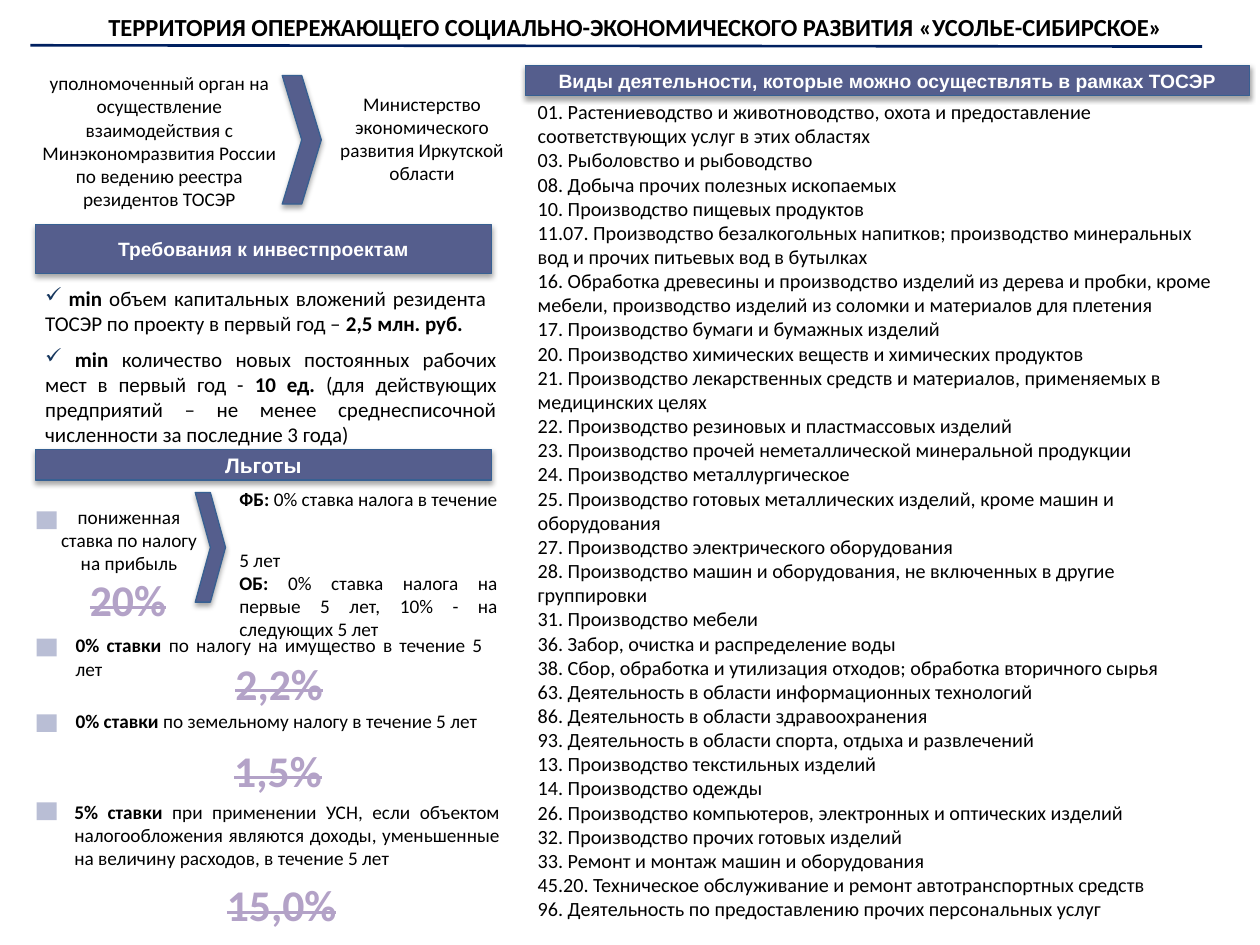
from lxml.etree import SubElement
from pptx import Presentation
from pptx.dml.color import RGBColor
from pptx.enum.shapes import MSO_CONNECTOR, MSO_SHAPE
from pptx.enum.text import MSO_ANCHOR, MSO_AUTO_SIZE, PP_ALIGN
from pptx.oxml.ns import qn
from pptx.util import Pt

COLORS = {"rule": "002060", "bar": "555E8D", "edge": "376092", "marker": "B9BED5",
          "rate": "B3A2C7", "check": "17375E", "black": "000000", "white": "FFFFFF"}
LEFT, CENTER, JUSTIFY = PP_ALIGN.LEFT, PP_ALIGN.CENTER, PP_ALIGN.JUSTIFY

TITLE = "*ТЕРРИТОРИЯ ОПЕРЕЖАЮЩЕГО СОЦИАЛЬНО-ЭКОНОМИЧЕСКОГО РАЗВИТИЯ «УСОЛЬЕ-СИБИРСКОЕ»*"
ACTIVITIES = [
    "01. Растениеводство и животноводство, охота и предоставление соответствующих услуг в этих областях",
    "03. Рыболовство и рыбоводство",
    "08. Добыча прочих полезных ископаемых",
    "10. Производство пищевых продуктов",
    "11.07. Производство безалкогольных напитков; производство минеральных вод и прочих питьевых вод в бутылках",
    "16. Обработка древесины и производство изделий из дерева и пробки, кроме мебели, "
    "производство изделий из соломки и материалов для плетения",
    "17. Производство бумаги и бумажных изделий",
    "20. Производство химических веществ и химических продуктов",
    "21. Производство лекарственных средств и материалов, применяемых в медицинских целях",
    "22. Производство резиновых и пластмассовых изделий",
    "23. Производство прочей неметаллической минеральной продукции",
    "24. Производство металлургическое",
    "25. Производство готовых металлических изделий, кроме машин и оборудования",
    "27. Производство электрического оборудования",
    "28. Производство машин и оборудования, не включенных в другие группировки",
    "31. Производство мебели",
    "36. Забор, очистка и распределение воды",
    "38. Сбор, обработка и утилизация отходов; обработка вторичного сырья",
    "63. Деятельность в области информационных технологий",
    "86. Деятельность в области здравоохранения",
    "93. Деятельность в области спорта, отдыха и развлечений",
    "13. Производство текстильных изделий",
    "14. Производство одежды",
    "26. Производство компьютеров, электронных и оптических изделий",
    "32. Производство прочих готовых изделий",
    "33. Ремонт и монтаж машин и оборудования",
    "45.20. Техническое обслуживание и ремонт автотранспортных средств",
    "96. Деятельность по предоставлению прочих персональных услуг",
]
# Every box is (left, top, width, height) in points; *text* is bold.
REQUIREMENTS = [
    ((18.7, 159.8, 266.4, 36),
     " *min *объем капитальных вложений резидента ТОСЭР по проекту в первый год – *2,5 млн. руб.*"),
    ((18.7, 194.4, 272.2, 65.5),
     "* min *количество новых постоянных рабочих мест в первый год - *10 ед. *"
     "(для действующих предприятий – не менее среднесписочной численности за последние 3 года)"),
]
BARS = [
    ((300.2, 37.4, 414, 17.3), 11, "*Виды деятельности, которые можно осуществлять в рамках ТОСЭР*"),
    ((20.2, 257, 260.6, 17.3), 12, "*Льготы*"),
    ((20.2, 128.2, 260.6, 28.1), 11, "*Требования к инвестпроектам*"),
]
CHEVRONS = [(161.3, 43.2, 22.3, 73.4), (111.6, 281.5, 17.3, 62.6)]
MARKER_TOPS = [292.3, 365, 408.2, 458.6]
OLD_RATES = [
    ((41.8, 324, 62.6, 37.4), "*20%*"),
    ((124.6, 371.5, 69.8, 37.4), "*2,2%*"),
    ((124.6, 421.2, 68.4, 37.4), "*1,5%*"),
    ((120.2, 498.2, 81.4, 37.4), "*15,0%*"),
]
NOTES = [
    ((14.4, 37.4, 153.4, 87.1), CENTER,
     ["уполномоченный орган на осуществление взаимодействия с Минэкономразвития России "
      "по ведению реестра резидентов ТОСЭР"]),
    ((190.1, 49, 102.2, 60.5), CENTER, ["Министерство экономического развития Иркутской области"]),
    ((133.9, 275, 153.4, 74.2), JUSTIFY,
     ["*ФБ: *0% ставка налога в течение \n5 лет",
      "*ОБ: *0% ставка налога на первые 5 лет, 10% - на следующих 5 лет"]),
    ((30.2, 285.1, 87.1, 47.5), CENTER, ["пониженная ставка по налогу на прибыль"]),
    ((40.3, 358.6, 238.3, 33.8), JUSTIFY, ["*0% ставки *по налогу на имущество в течение 5 лет"]),
    ((40.3, 401.8, 249.1, 20.9), JUSTIFY, ["*0% ставки *по земельному налогу в течение 5 лет"]),
    ((39.6, 453.6, 249.1, 47.5), JUSTIFY,
     ["*5% ставки *при применении УСН, если объектом налогообложения являются доходы, "
      "уменьшенные на величину расходов, в течение 5 лет"]),
]

prs = Presentation()
prs.slide_width, prs.slide_height = Pt(720), Pt(540)
s = prs.slides.add_slide(prs.slide_layouts[6])


def rgb(name):
    return RGBColor.from_string(COLORS[name])


def write(sp, paragraphs, size=11, font="Calibri", color="black", align=LEFT, inset=7.2,
          anchor=MSO_ANCHOR.TOP, grow=True, wrap=True, check=False, strike=False):
    tf = sp.text_frame
    tf.word_wrap = wrap
    tf.vertical_anchor = anchor
    tf.auto_size = MSO_AUTO_SIZE.SHAPE_TO_FIT_TEXT if grow else MSO_AUTO_SIZE.NONE
    tf.margin_left = tf.margin_right = Pt(inset)
    for i, text in enumerate(paragraphs):
        p = tf.add_paragraph() if i else tf.paragraphs[0]
        p.alignment = align
        if check:
            pPr = p._p.get_or_add_pPr()
            SubElement(SubElement(pPr, qn("a:buClr")), qn("a:srgbClr"), val=COLORS["check"])
            SubElement(pPr, qn("a:buChar"), char="✓")
        for j, part in enumerate(text.split("*")):
            for k, line in enumerate(part.split("\n")):
                if k:
                    p.add_line_break()
                if not line:
                    continue
                r = p.add_run()
                r.text = line
                r.font.size, r.font.name, r.font.bold = Pt(size), font, j % 2 == 1
                r.font.color.rgb = rgb(color)
                if strike:
                    r._r.get_or_add_rPr().set("strike", "sngStrike")


def text_box(box, paragraphs, **fmt):
    write(s.shapes.add_textbox(*map(Pt, box)), paragraphs, **fmt)


def shape(kind, box, fill):
    sp = s.shapes.add_shape(kind, *map(Pt, box))
    sp.fill.solid()
    sp.fill.fore_color.rgb = rgb(fill)
    sp.line.fill.background()
    sp.shadow.inherit = False
    return sp


def raised_shape(kind, box):
    """Add a dark shape with a thin edge and a soft shadow below."""
    sp = shape(kind, box, "bar")
    sp.line.color.rgb = rgb("edge")
    sp.line.width = Pt(0.75)
    effects = sp._element.spPr.find(qn("a:effectLst"))
    shadow = SubElement(effects, qn("a:outerShdw"), blurRad=str(Pt(3.1)), dist=str(Pt(1.8)),
                        dir="5400000", rotWithShape="0")
    clr = SubElement(shadow, qn("a:srgbClr"), val=COLORS["black"])
    SubElement(clr, qn("a:alpha"), val="35000")
    return sp


rule = s.shapes.add_connector(MSO_CONNECTOR.STRAIGHT, Pt(17.3), Pt(25.9), Pt(686.9), Pt(26.6))
rule.line.color.rgb = rgb("rule")
rule.line.width = Pt(1.5)
SubElement(rule._element.spPr, qn("a:effectLst"))

text_box((20.2, 3.6, 686.2, 24.5), [TITLE], size=14, align=CENTER)
text_box((300.2, 53.3, 408.2, 494.6), ACTIVITIES, size=11.5)
for box, text in REQUIREMENTS:
    text_box(box, [text], size=12, align=JUSTIFY, check=True)
for box, size, text in BARS:
    write(raised_shape(MSO_SHAPE.RECTANGLE, box), [text], size=size, font="Arial", color="white",
          align=CENTER, anchor=MSO_ANCHOR.MIDDLE, grow=False, wrap=False)
for box in CHEVRONS:
    raised_shape(MSO_SHAPE.CHEVRON, box)
for top in MARKER_TOPS:
    shape(MSO_SHAPE.RECTANGLE, (20.9, top, 11.5, 10.1), "marker")
for box, text in OLD_RATES:
    write(shape(MSO_SHAPE.RECTANGLE, box, "white"), [text], size=25, color="rate",
          align=CENTER, strike=True)
for box, align, paragraphs in NOTES:
    text_box(box, paragraphs, align=align, inset=2.9)

prs.save("out.pptx")
